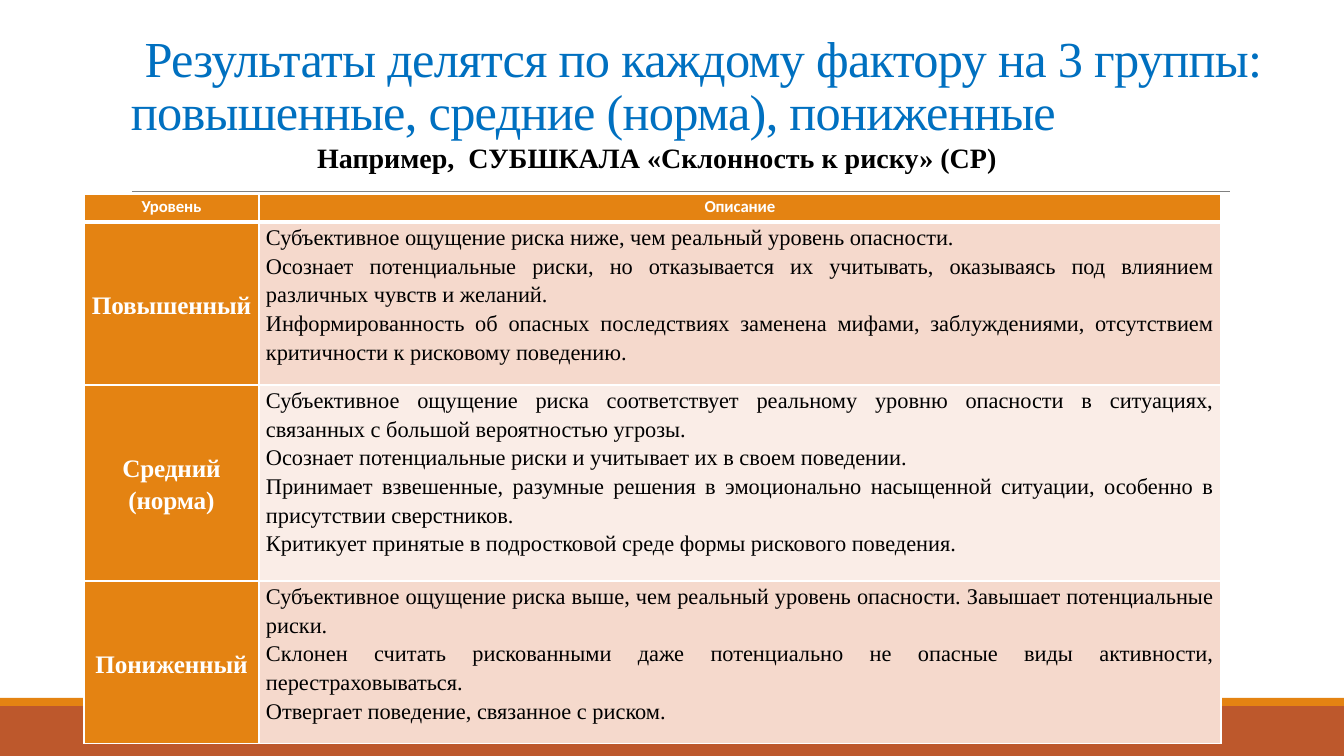
from lxml import etree
from pptx import Presentation, util as u
from pptx.dml.color import RGBColor
from pptx.enum import shapes, text
from pptx.oxml import ns

PX = 914400 / 100.8
SERIF, SANS = "Times New Roman", "Calibri"
ORANGE, RUST, WHITE, BLACK = "E48312", "BD582C", "FFFFFF", "000000"
CENTER, JUSTIFY = text.PP_ALIGN.CENTER, text.PP_ALIGN.JUSTIFY


def px(*lengths):
    """Turn pixel lengths into a list of EMU."""
    return [u.Emu(round(length * PX)) for length in lengths]


def style_run(run, size, font, color, bold=False, tracking=0):
    """Format a run; tracking is in hundredths of a point."""
    run.font.size = u.Pt(size)
    run.font.name = font
    run.font.bold = bold
    run.font.color.rgb = RGBColor.from_string(color)
    run.font._element.set("spc", str(tracking))


presentation = Presentation()
presentation.slide_width, presentation.slide_height = px(1344, 756)
slide = presentation.slides.add_slide(presentation.slide_layouts[6])

# Footer bands and the rule under the title
for top, height, color in [(706, 50, RUST), (698, 8, ORANGE)]:
    band = slide.shapes.add_shape(shapes.MSO_SHAPE.RECTANGLE, *px(0, top, 1344, height))
    band.shadow.inherit = False
    band.fill.solid()
    band.fill.fore_color.rgb = RGBColor.from_string(color)
    band.line.fill.background()

rule = slide.shapes.add_connector(shapes.MSO_CONNECTOR.STRAIGHT, *px(132, 191, 1230, 191))
rule.line.color.rgb = RGBColor.from_string("808080")
rule.line.width = u.Pt(0.5)
etree.SubElement(rule._element.spPr, ns.qn("a:effectLst"))

# Title and subtitle
title = slide.shapes.add_textbox(*px(121, 31, 1151, 115)).text_frame
title.word_wrap = True
title.vertical_anchor = text.MSO_ANCHOR.BOTTOM
paragraph = title.paragraphs[0]
paragraph.line_spacing = 0.85
title_runs = [
    ("\N{NO-BREAK SPACE}", 43.2, SANS, "404040"),
    ("Результаты делятся по каждому фактору на 3 группы: повышенные, средние (норма), пониженные",
     36, SERIF, "0070C0"),
]
for words, size, font, color in title_runs:
    run = paragraph.add_run()
    run.text = words
    style_run(run, size, font, color, tracking=-50)

subtitle = slide.shapes.add_textbox(*px(84, 139, 1146, 50)).text_frame
subtitle.word_wrap = True
subtitle.margin_left = subtitle.margin_right = 0
subtitle.text = "Например,  СУБШКАЛА «Склонность к риску» (СР)"
paragraph = subtitle.paragraphs[0]
paragraph.alignment = CENTER
paragraph.line_spacing = 0.9
paragraph.space_before, paragraph.space_after = u.Pt(12), u.Pt(2)
style_run(paragraph.runs[0], 20, SERIF, BLACK, bold=True)

# Table of levels
rows = [
    (28, ["Уровень"], ["Описание"]),
    (163, ["Повышенный"], [
        "Субъективное ощущение риска ниже, чем реальный уровень опасности.",
        "Осознает потенциальные риски, но отказывается их учитывать, оказываясь под влиянием "
        "различных чувств и желаний. ",
        "Информированность об опасных последствиях заменена мифами, заблуждениями, отсутствием "
        "критичности к рисковому поведению.",
    ]),
    (196, ["Средний", "(норма)"], [
        "Субъективное ощущение риска соответствует реальному уровню опасности в ситуациях, "
        "связанных с большой вероятностью угрозы. ",
        "Осознает потенциальные риски и учитывает их в своем поведении. ",
        "Принимает взвешенные, разумные решения в эмоционально насыщенной ситуации, особенно в "
        "присутствии сверстников. ",
        "Критикует принятые в подростковой среде формы рискового поведения.",
    ]),
    (163, ["Пониженный"], [
        "Субъективное ощущение риска выше, чем реальный уровень опасности. Завышает "
        "потенциальные риски. ",
        "Склонен считать рискованными даже потенциально не опасные виды активности, "
        "перестраховываться. ",
        "Отвергает поведение, связанное с риском.",
    ]),
]
table = slide.shapes.add_table(len(rows), 2, *px(84, 194, 1137, 550)).table
table.first_row = table.horz_banding = False
for column, width in zip(table.columns, px(175, 962)):
    column.width = width

for row_index, (height, *contents) in enumerate(rows):
    table.rows[row_index].height = px(height)[0]
    header = row_index == 0
    for column_index, lines in enumerate(contents):
        cell = table.cell(row_index, column_index)
        description = column_index == 1 and not header
        if header:
            fill, alignment, font_style = ORANGE, CENTER, (12, SANS, WHITE, True, -10)
        elif description:
            fill = "F5D9CC" if row_index % 2 else "FAEDE7"
            alignment, font_style = JUSTIFY, (16, SERIF, BLACK)
        else:
            fill, alignment, font_style = ORANGE, CENTER, (18, SERIF, WHITE, True, -10)
            cell.vertical_anchor = text.MSO_ANCHOR.MIDDLE

        cell.margin_left = cell.margin_right = px(7)[0]
        cell.margin_top = cell.margin_bottom = 0
        cell.text_frame.text = "\n".join(lines)
        for paragraph in cell.text_frame.paragraphs:
            paragraph.alignment = alignment
            paragraph.line_spacing = 1.15
            style_run(paragraph.runs[0], *font_style)

        properties = cell._tc.get_or_add_tcPr()
        for side in "LRTB":
            thick = (header and side == "B") or (row_index == 1 and side == "T")
            border = etree.SubElement(properties, ns.qn(f"a:ln{side}"), w=str(u.Pt(3 if thick else 1)))
            border_fill = etree.SubElement(border, ns.qn("a:solidFill"))
            etree.SubElement(border_fill, ns.qn("a:srgbClr"), val=WHITE)
        cell.fill.solid()
        cell.fill.fore_color.rgb = RGBColor.from_string(fill)

presentation.save("out.pptx")
